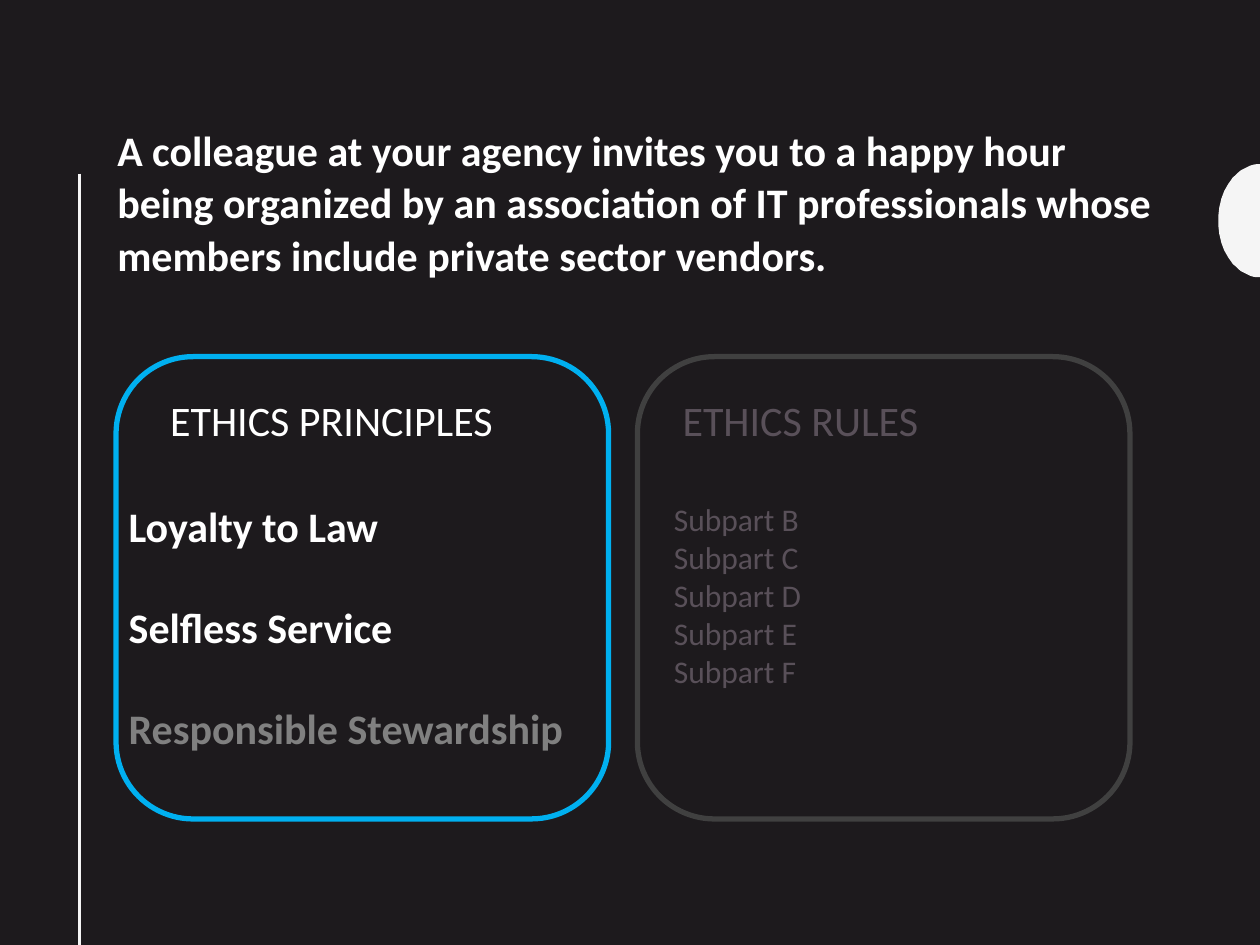
from math import cos, pi, sin

from lxml.etree import SubElement
from pptx import Presentation
from pptx.dml.color import RGBColor as Rgb
from pptx.enum.shapes import MSO_CONNECTOR as Connector, MSO_SHAPE as Preset
from pptx.enum.text import MSO_ANCHOR as Anchor, MSO_AUTO_SIZE as AutoSize, PP_ALIGN as Align
from pptx.oxml.ns import qn
from pptx.util import Cm, Pt

COLORS = {
    "background": "1D1A1D",
    "ornament": "F5F5F5",
    "white": "FFFFFF",
    "blue": "00B0F0",
    "frame": "404040",
    "dim": "595059",
    "gray": "808080",
}
FONT = "Calibri"


def color(name):
    """Return the named colour."""
    return Rgb.from_string(COLORS[name])


def place(shape, left, top, width, height):
    """Move and size a shape, in centimetres."""
    shape.left, shape.top = Cm(left), Cm(top)
    shape.width, shape.height = Cm(width), Cm(height)


def write(shape, lines, size, tints, bold=False, gap=0, spacing=1.0):
    """Fill a shape with plain left-aligned lines, one tint to each."""
    frame = shape.text_frame
    frame.text = "\n".join(lines)
    frame.word_wrap = True
    frame.auto_size = AutoSize.NONE
    frame.vertical_anchor = Anchor.TOP
    for para, tint in zip(frame.paragraphs, tints):
        para.alignment = Align.LEFT
        para.line_spacing = spacing
        para.space_before = Pt(0)
        para.space_after = Pt(gap)
        props = para._p.get_or_add_pPr()
        props.set("marL", "0")
        props.set("indent", "0")
        SubElement(props, qn("a:buNone"))
        for span in para.runs:
            span.font.name = FONT
            span.font.size = Pt(size)
            span.font.bold = bold
            span.font.color.rgb = color(tint)


def add_ornaments(page, right, bottom):
    """Draw the half disc on the right edge and the line on the left."""
    radius_x, radius_y, middle = 0.84, 1.14, 4.45
    steps = 40
    points = [
        (100 * (right - radius_x * sin(pi * i / steps)),
         100 * (middle - radius_y * cos(pi * i / steps)))
        for i in range(steps + 1)
    ]
    builder = page.shapes.build_freeform(*points[0], scale=Cm(0.01))
    builder.add_line_segments(points[1:], close=True)
    disc = builder.convert_to_shape()
    disc.shadow.inherit = False
    disc.fill.solid()
    disc.fill.fore_color.rgb = color("ornament")
    disc.line.fill.background()

    rule = page.shapes.add_connector(
        Connector.STRAIGHT, Cm(1.6), Cm(3.5), Cm(1.6), Cm(bottom))
    rule.line.color.rgb = color("ornament")
    rule.line.width = Pt(2)
    SubElement(rule._element.spPr, qn("a:effectLst"))


def add_panel(page, box, border, heading, tint, indent):
    """Draw a rounded frame with its heading."""
    left, top, width, height = box
    label = page.shapes.add_textbox(
        Cm(left + indent), Cm(top + 0.64), Cm(9.17), Cm(1.27))
    write(label, [heading], 24, [tint])

    frame = page.shapes.add_shape(
        Preset.ROUNDED_RECTANGLE, Cm(left), Cm(top), Cm(width), Cm(height))
    frame.shadow.inherit = False
    frame.fill.background()
    frame.line.color.rgb = color(border)
    frame.line.width = Pt(3)


def main():
    """Build the deck and save it."""
    deck = Presentation()
    deck.slide_width, deck.slide_height = Cm(25.4), Cm(19.05)
    page = deck.slides.add_slide(deck.slide_layouts[3])
    page.background.fill.solid()
    page.background.fill.fore_color.rgb = color("background")
    add_ornaments(page, 25.4, 19.05)

    title, principles, rules = page.placeholders
    place(title, 2.11, 2.34, 21.59, 4.6)
    write(title, [
        "A colleague at your agency invites you to a happy hour being organized by "
        "an association of IT professionals whose members include private sector vendors."
    ], 24, ["white"], bold=True, spacing=1.04)

    left, top, width, height = 2.34, 7.19, 9.93, 9.32
    second = left + width + 0.58
    add_panel(page, (left, top, width, height), "blue", "ETHICS PRINCIPLES", "white", 0.84)
    add_panel(page, (second, top, width, height), "frame", "ETHICS RULES", "dim", 0.66)

    place(principles, left, top + 2.77, 9.75, 5.38)
    write(principles, ["Loyalty to Law", "Selfless Service", "Responsible Stewardship"],
          24, ["white", "white", "gray"], bold=True, gap=29)
    place(rules, second + 0.48, top + 2.77, 12, 4.11)
    write(rules, [f"Subpart {letter}" for letter in "BCDEF"], 18, ["dim"] * 5)

    deck.save("out.pptx")


if __name__ == "__main__":
    main()
